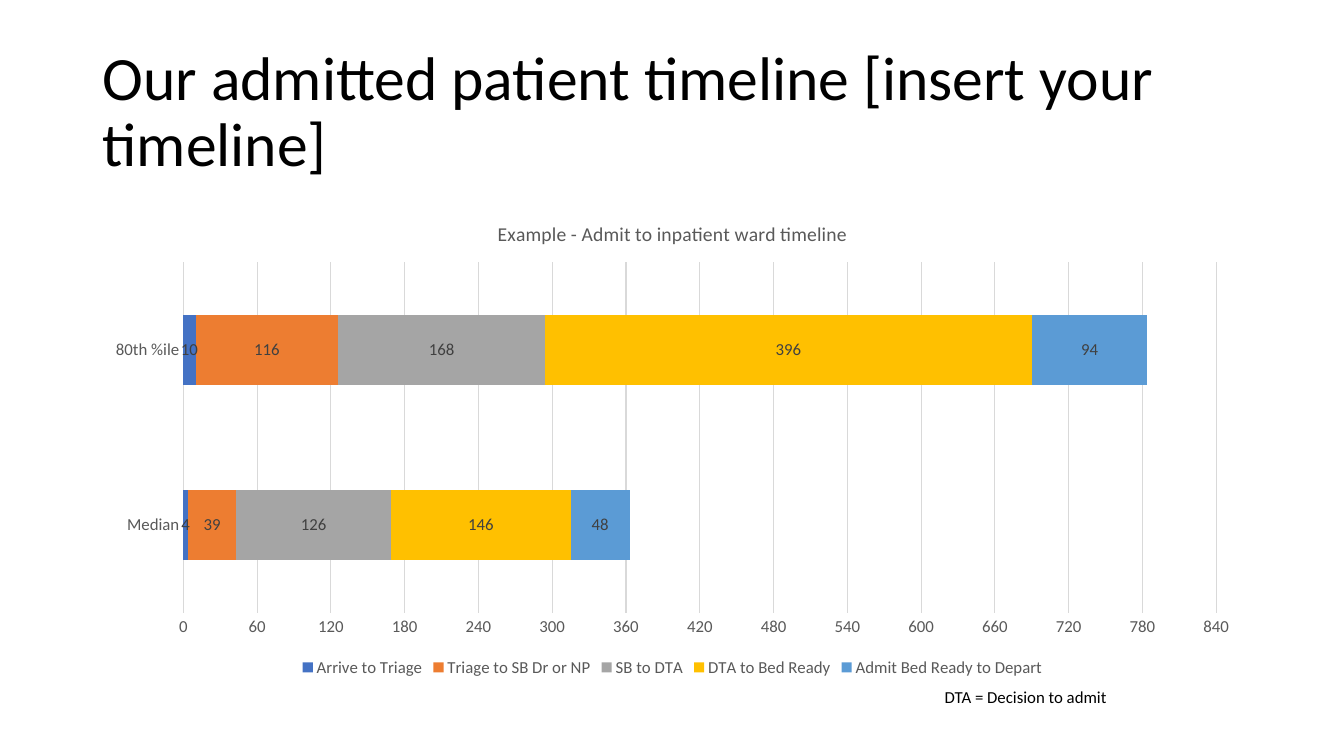
from pptx import Presentation
from pptx.chart.data import CategoryChartData
from pptx.dml.color import RGBColor
from pptx.enum.chart import XL_CHART_TYPE, XL_LABEL_POSITION, XL_LEGEND_POSITION, XL_TICK_MARK
from pptx.enum.text import MSO_ANCHOR
from pptx.util import Inches, Pt

FONT = "Calibri"
COLOURS = {
    "text": "000000",
    "axis": "595959",
    "label": "404040",
    "grid": "D9D9D9",
}
CATEGORIES = ["Median", "80th %ile"]
STAGES = [
    ("Arrive to Triage", (4, 10), "4472C4"),
    ("Triage to SB Dr or NP", (39, 116), "ED7D31"),
    ("SB to DTA", (126, 168), "A5A5A5"),
    ("DTA to Bed Ready", (146, 396), "FFC000"),
    ("Admit Bed Ready to Depart", (48, 94), "5B9BD5"),
]


def style_font(font, size, colour):
    font.name = FONT
    font.size = Pt(size)
    font.bold = False
    font.color.rgb = RGBColor.from_string(COLOURS[colour])


def style_line(line):
    line.color.rgb = RGBColor.from_string(COLOURS["grid"])
    line.width = Pt(0.75)


def add_text(page, text, left, top, width, height, size, anchor, spacing):
    box = page.shapes.add_textbox(Inches(left), Inches(top), Inches(width), Inches(height))
    frame = box.text_frame
    frame.word_wrap = True
    frame.vertical_anchor = anchor
    frame.text = text
    para = frame.paragraphs[0]
    para.line_spacing = spacing
    style_font(para.runs[0].font, size, "text")


def style_axes(chart):
    for axis in (chart.category_axis, chart.value_axis):
        axis.major_tick_mark = XL_TICK_MARK.NONE
        axis.minor_tick_mark = XL_TICK_MARK.NONE
        style_font(axis.tick_labels.font, 12, "axis")
    style_line(chart.category_axis.format.line)
    minutes = chart.value_axis
    minutes.minimum_scale = 0
    minutes.maximum_scale = 840
    minutes.major_unit = 60
    minutes.tick_labels.number_format = "0"
    minutes.tick_labels.number_format_is_linked = False
    minutes.format.line.fill.background()
    style_line(minutes.major_gridlines.format.line)


def style_series(series, colour):
    series.format.fill.solid()
    series.format.fill.fore_color.rgb = RGBColor.from_string(colour)
    labels = series.data_labels
    labels.show_value = True
    labels.number_format = "0"
    labels.number_format_is_linked = False
    labels.position = XL_LABEL_POSITION.CENTER
    style_font(labels.font, 12, "label")


def add_timeline(page):
    data = CategoryChartData(number_format="0")
    data.categories = CATEGORIES
    for name, values, _ in STAGES:
        data.add_series(name, values)
    chart = page.shapes.add_chart(
        XL_CHART_TYPE.BAR_STACKED, Inches(0.92), Inches(2), Inches(11.5), Inches(4.76), data
    ).chart
    style_font(chart.font, 12, "text")

    chart.has_title = True
    title = chart.chart_title.text_frame
    title.text = "Example - Admit to inpatient ward timeline"
    style_font(title.paragraphs[0].runs[0].font, 14, "axis")
    chart.chart_title.include_in_layout = False

    chart.has_legend = True
    chart.legend.position = XL_LEGEND_POSITION.BOTTOM
    chart.legend.include_in_layout = False
    style_font(chart.legend.font, 12, "axis")

    style_axes(chart)
    plot = chart.plots[0]
    plot.vary_by_categories = False
    plot.gap_width = 150
    plot.overlap = 100
    for series, (_, _, colour) in zip(plot.series, STAGES):
        style_series(series, colour)


def main():
    deck = Presentation()
    deck.slide_width = Inches(13.33)
    deck.slide_height = Inches(7.5)
    page = deck.slides.add_slide(deck.slide_layouts[6])
    add_text(page, "Our admitted patient timeline [insert your timeline]",
             0.92, 0.4, 11.5, 1.45, 44, MSO_ANCHOR.MIDDLE, 0.9)
    add_timeline(page)
    add_text(page, "DTA = Decision to admit",
             9.27, 6.76, 2.63, 0.3, 12, MSO_ANCHOR.TOP, 1.0)
    deck.save("out.pptx")


if __name__ == "__main__":
    main()
